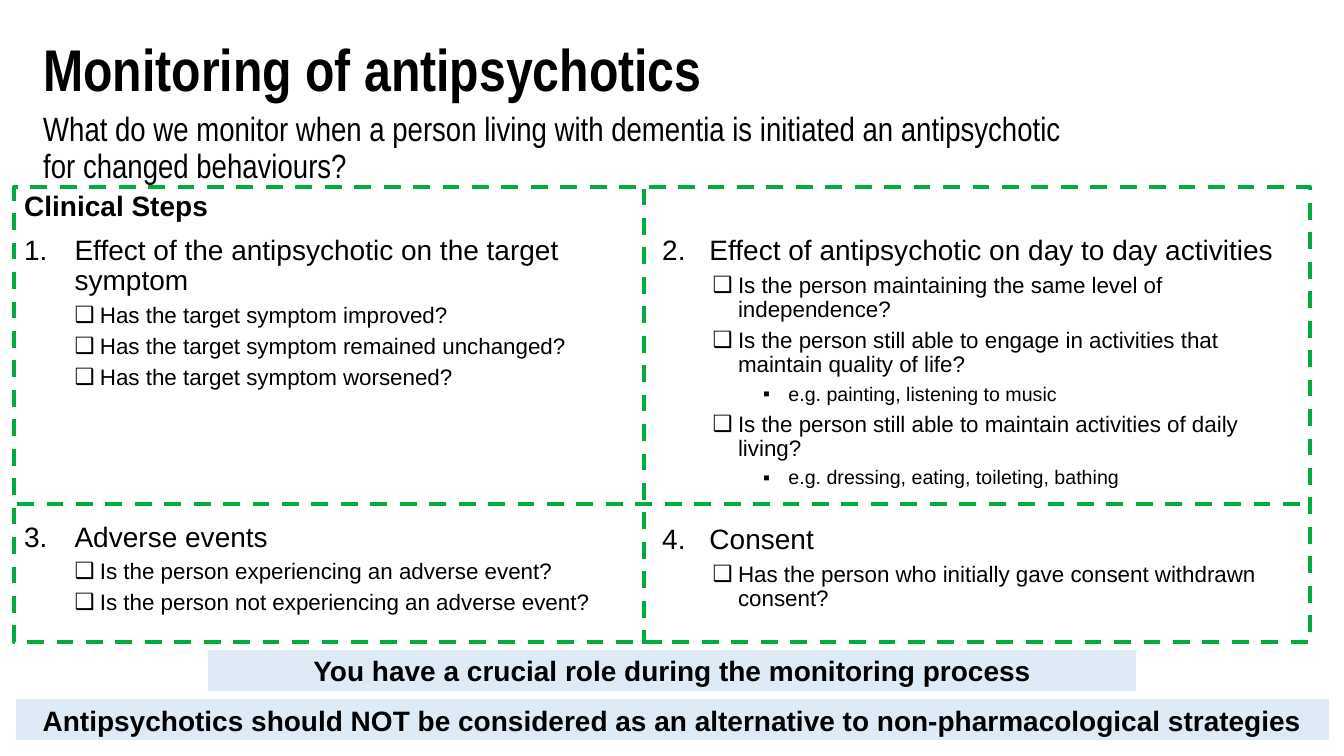
from lxml.etree import SubElement
from pptx import Presentation
from pptx.dml.color import RGBColor
from pptx.enum.dml import MSO_LINE
from pptx.enum.shapes import MSO_CONNECTOR, MSO_SHAPE
from pptx.enum.text import MSO_ANCHOR, MSO_AUTO_SIZE, PP_ALIGN
from pptx.oxml.ns import qn
from pptx.util import Cm, Pt

COLORS = {"text": "000000", "grid": "00AC3E", "banner": "DEEBF7", "white": "FFFFFF"}

TITLE = "Monitoring of antipsychotics"
SUBTITLE = ("What do we monitor when a person living with dementia is initiated "
            "an antipsychotic for changed behaviours?")

# Each step: number, column, top (cm), paragraphs as (style, text)
STEPS = [
    (1, 0, 4.72, [
        ("label", "Clinical Steps"),
        ("step", "Effect of the antipsychotic on the target symptom"),
        ("check", "Has the target symptom improved?"),
        ("check", "Has the target symptom remained unchanged?"),
        ("check", "Has the target symptom worsened?"),
    ]),
    (2, 1, 5.84, [
        ("step", "Effect of antipsychotic on day to day activities"),
        ("check", "Is the person maintaining the same level of independence?"),
        ("check", "Is the person still able to engage in activities that maintain quality of life?"),
        ("example", "e.g. painting, listening to music"),
        ("check", "Is the person still able to maintain activities of daily living?"),
        ("example", "e.g. dressing, eating, toileting, bathing"),
    ]),
    (3, 0, 13.06, [
        ("step", "Adverse events"),
        ("check", "Is the person experiencing an adverse event?"),
        ("check", "Is the person not experiencing an adverse event?"),
    ]),
    (4, 1, 13.12, [
        ("step", "Consent"),
        ("check", "Has the person who initially gave consent withdrawn consent?"),
    ]),
]

# Style: size, space before, bullet, text indent (cm), hanging (cm)
STYLES = {
    "label": (20, 10, None, 0, 0),
    "step": (20, 10, "number", 1.27, 1.27),
    "check": (16, 5, "❑", 1.91, 0.64),
    "example": (14, 5, "▪", 3.18, 0.64),
}
RIGHT_STEP_INDENT = 1.19

# Banner: text, left, top, width (cm)
BANNERS = [
    ("You have a crucial role during the monitoring process", 5.21, 16.33, 23.47),
    ("Antipsychotics should NOT be considered as an alternative to "
     "non-pharmacological strategies", 0.36, 17.58, 33.17),
]
BANNER_HEIGHT = 1.12

FRAME_LEFT, FRAME_TOP, FRAME_WIDTH, FRAME_HEIGHT = 0.36, 4.72, 32.66, 11.46
DIVIDERS = [(16.23, 4.75, 16.23, 16.23), (0.43, 12.7, 33.07, 12.7)]
INSET = 0.25
COLUMN_WIDTH = (FRAME_WIDTH - 2 * INSET) / 2


def color(name):
    return RGBColor.from_string(COLORS[name])


def set_font(para, size, name="Arial", bold=False):
    para.font.name = name
    para.font.size = Pt(size)
    para.font.bold = bold
    para.font.color.rgb = color("text")


def set_bullet(para, bullet, number, indent, hanging):
    props = para._p.get_or_add_pPr()
    props.set("marL", str(Cm(indent)))
    props.set("indent", str(-Cm(hanging)))
    if bullet is None:
        SubElement(props, qn("a:buNone"))
    elif bullet == "number":
        SubElement(props, qn("a:buFont"), typeface="Arial")
        SubElement(props, qn("a:buAutoNum"), type="arabicPeriod", startAt=str(number))
    else:
        SubElement(props, qn("a:buFont"), typeface="Arial")
        SubElement(props, qn("a:buChar"), char=bullet)


def style_grid_line(line):
    line.color.rgb = color("grid")
    line.width = Pt(3)
    line.dash_style = MSO_LINE.DASH


def fill_heading(shape, text, size, bold):
    frame = shape.text_frame
    frame.word_wrap = True
    frame.auto_size = MSO_AUTO_SIZE.NONE
    frame.vertical_anchor = MSO_ANCHOR.TOP
    para = frame.paragraphs[0]
    para.text = text
    para.alignment = PP_ALIGN.LEFT
    para.line_spacing = 0.9
    set_font(para, size, "Arial Narrow", bold)


def add_headings(page):
    title = page.shapes.title
    title.left, title.top, title.width, title.height = Cm(0.84), Cm(0.91), Cm(27.38), Cm(2.06)
    fill_heading(title, TITLE, 42, True)
    subtitle = page.shapes.add_textbox(Cm(0.84), Cm(2.72), Cm(26.75), Cm(1.3))
    fill_heading(subtitle, SUBTITLE, 24, False)


def add_grid(page):
    frame = page.shapes.add_shape(MSO_SHAPE.RECTANGLE, Cm(FRAME_LEFT), Cm(FRAME_TOP),
                                  Cm(FRAME_WIDTH), Cm(FRAME_HEIGHT))
    frame.shadow.inherit = False
    frame.fill.background()
    style_grid_line(frame.line)
    for ends in DIVIDERS:
        divider = page.shapes.add_connector(MSO_CONNECTOR.STRAIGHT, *map(Cm, ends))
        SubElement(divider._element.spPr, qn("a:effectLst"))
        style_grid_line(divider.line)


def add_step(page, number, column, top, lines):
    left = FRAME_LEFT + column * COLUMN_WIDTH
    bottom = DIVIDERS[1][1] if number <= 2 else FRAME_TOP + FRAME_HEIGHT
    box = page.shapes.add_textbox(Cm(left), Cm(top), Cm(COLUMN_WIDTH + 2 * INSET),
                                  Cm(bottom - top))
    frame = box.text_frame
    frame.word_wrap = True
    for index, (style, text) in enumerate(lines):
        size, space, bullet, indent, hanging = STYLES[style]
        if style == "step" and column == 1:
            indent = hanging = RIGHT_STEP_INDENT
        para = frame.add_paragraph() if index else frame.paragraphs[0]
        para.text = text
        para.line_spacing = 0.9
        para.space_before = Pt(space if index else 0)
        set_bullet(para, bullet, number, indent, hanging)
        set_font(para, size, bold=style == "label")


def add_banner(page, text, left, top, width):
    banner = page.shapes.add_shape(MSO_SHAPE.RECTANGLE, Cm(left), Cm(top),
                                   Cm(width), Cm(BANNER_HEIGHT))
    banner.shadow.inherit = False
    banner.fill.solid()
    banner.fill.fore_color.rgb = color("banner")
    banner.line.color.rgb = color("white")
    banner.line.width = Pt(2.25)
    banner.text_frame.word_wrap = True
    para = banner.text_frame.paragraphs[0]
    para.text = text
    para.alignment = PP_ALIGN.CENTER
    set_font(para, 20, bold=True)


def main():
    deck = Presentation()
    deck.slide_width, deck.slide_height = Cm(33.87), Cm(19.05)
    page = deck.slides.add_slide(deck.slide_layouts[5])
    add_headings(page)
    add_grid(page)
    for step in STEPS:
        add_step(page, *step)
    for banner in BANNERS:
        add_banner(page, *banner)
    deck.save("out.pptx")


if __name__ == "__main__":
    main()
